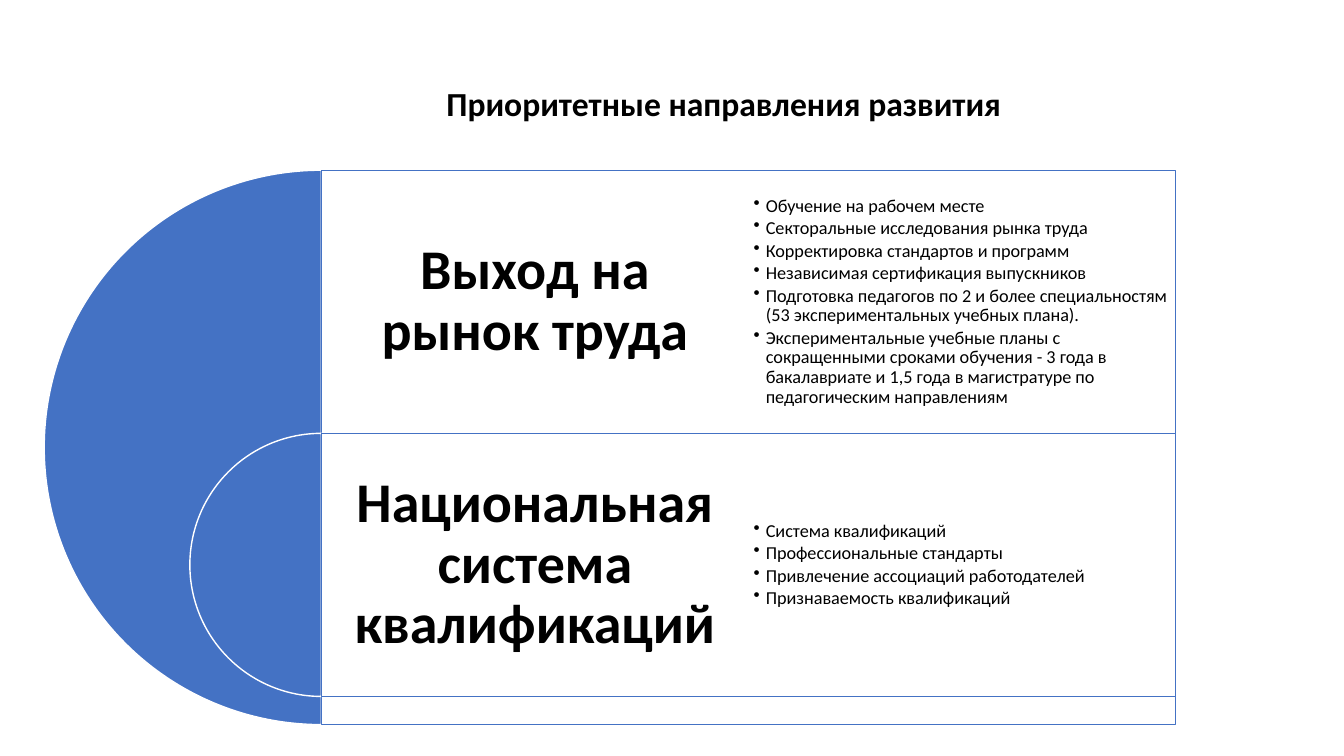
from dataclasses import dataclass

from lxml import etree
from pptx import Presentation
from pptx.dml.color import RGBColor
from pptx.enum.shapes import MSO_SHAPE
from pptx.enum.text import MSO_ANCHOR, PP_ALIGN
from pptx.oxml.ns import qn
from pptx.util import Cm, Pt

PIE, RECTANGLE = MSO_SHAPE.PIE, MSO_SHAPE.RECTANGLE
MIDDLE, CENTER, LEFT = MSO_ANCHOR.MIDDLE, PP_ALIGN.CENTER, PP_ALIGN.LEFT


@dataclass(frozen=True)
class Theme:
    """Colours, typeface and type sizes of the slide."""
    accent: RGBColor = RGBColor(0x44, 0x72, 0xC4)
    white: RGBColor = RGBColor(0xFF, 0xFF, 0xFF)
    text: RGBColor = RGBColor(0, 0, 0)
    face: str = "Calibri"
    title: Pt = Pt(24)
    heading: Pt = Pt(40)
    detail: Pt = Pt(13)


THEME = Theme()

DIRECTIONS = [
    ("Выход на рынок труда", [
        "Обучение на рабочем месте",
        "Секторальные исследования рынка труда",
        "Корректировка стандартов и программ",
        "Независимая сертификация выпускников",
        "Подготовка педагогов по 2 и более специальностям "
        "(53 экспериментальных учебных плана).",
        "Экспериментальные учебные планы с сокращенными сроками обучения - "
        "3 года в бакалавриате и 1,5 года в магистратуре по "
        "педагогическим направлениям",
    ]),
    ("Национальная система квалификаций", [
        "Система квалификаций",
        "Профессиональные стандарты",
        "Привлечение ассоциаций работодателей",
        "Признаваемость квалификаций",
    ]),
]


def write(frame, lines, size, margin, bold=False, align=CENTER, after=0):
    """Fill a text frame with equally formatted paragraphs."""
    frame.word_wrap = True
    frame.vertical_anchor = MIDDLE
    frame.margin_left = frame.margin_right = Cm(margin)
    frame.margin_top = frame.margin_bottom = Cm(margin)
    frame.text = "\n".join(lines)
    for paragraph in frame.paragraphs:
        paragraph.alignment = align
        paragraph.line_spacing = 0.9
        paragraph.space_before = Pt(0)
        paragraph.space_after = Pt(after)
        font = paragraph.font
        font.name, font.size, font.bold = THEME.face, size, bold
        font.color.rgb = THEME.text


def add_panel(shapes, preset, box, fill, line):
    """Add a filled, outlined shape without a shadow."""
    panel = shapes.add_shape(preset, *map(Cm, box))
    panel.shadow.inherit = False
    panel.fill.solid()
    panel.fill.fore_color.rgb = fill
    panel.line.color.rgb = line
    panel.line.width = Pt(1)
    return panel


prs = Presentation()
prs.slide_width, prs.slide_height = Cm(33.87), Cm(19.05)
slide = prs.slides.add_slide(prs.slide_layouts[5])
shapes = slide.shapes

title = shapes.title
title.left, title.top, title.width, title.height = map(Cm, (7.42, 1.7, 21.64, 1.9))
write(title.text_frame, ["Приоритетные направления развития"], THEME.title, 0.2, bold=True)

# Each row starts one row height lower, with a smaller half disc beside it.
axis, top, row_height = 8.1, 4.29, 6.63
column_width = 10.76
diameters = [13.97, row_height]

for row, ((heading, details), diameter) in enumerate(zip(DIRECTIONS, diameters)):
    row_top = top + row * row_height

    half_disc = add_panel(shapes, PIE, (axis - diameter / 2, row_top, diameter, diameter),
                          THEME.accent, THEME.white)
    half_disc.adjustments[0] = 54
    half_disc.adjustments[1] = 162

    add_panel(shapes, RECTANGLE, (axis, row_top, 2 * column_width, diameter),
              THEME.white, THEME.accent)

    heading_box = shapes.add_textbox(*map(Cm, (axis, row_top, column_width, row_height)))
    write(heading_box.text_frame, [heading], THEME.heading, 0.43, bold=True)

    detail_box = shapes.add_textbox(
        *map(Cm, (axis + column_width, row_top, column_width, row_height)))
    write(detail_box.text_frame, details, THEME.detail, 0.13, align=LEFT, after=2)
    for paragraph in detail_box.text_frame.paragraphs:
        paragraph.level = 1
        properties = paragraph._p.get_or_add_pPr()
        properties.set("marL", str(Cm(0.31)))
        properties.set("indent", str(-Cm(0.31)))
        bullet = etree.Element(qn("a:buChar"), char="•")
        properties.find(qn("a:spcAft")).addnext(bullet)

prs.save("out.pptx")
